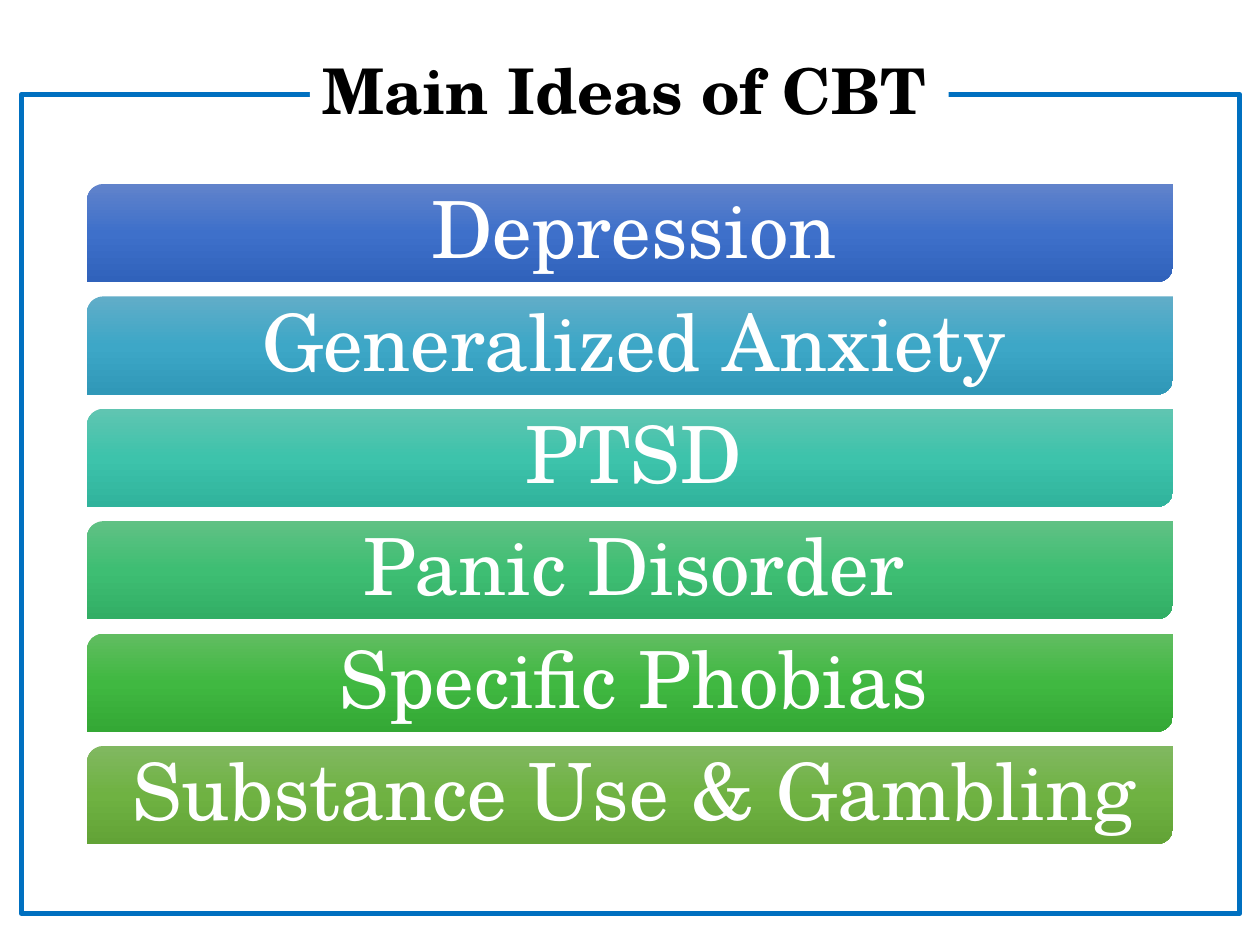
from copy import deepcopy

from pptx import Presentation
from pptx.dml.color import RGBColor
from pptx.enum.shapes import MSO_SHAPE
from pptx.enum.text import MSO_ANCHOR, PP_ALIGN
from pptx.oxml.ns import qn
from pptx.util import Inches, Pt

FONT = "TeX Gyre Schola"
WHITE = RGBColor(0xFF, 0xFF, 0xFF)
BLACK = RGBColor(0, 0, 0)
BLUE = RGBColor(0x00, 0x70, 0xC0)

# Label, then the bar's top, middle and bottom colours
IDEAS = [
    ("Depression", "6183CB", "3E70CA", "3062BB"),
    ("Generalized Anxiety", "61ADC8", "3DA7C7", "3098B8"),
    ("PTSD", "60C5B1", "3DC3AB", "30B39C"),
    ("Panic Disorder", "60C184", "3EBE73", "32AE65"),
    ("Specific Phobias", "61BD61", "40B841", "34A835"),
    ("Substance Use & Gambling", "81B861", "6FB242", "62A336"),
]


def shade(shape, shades):
    """Fill from top to bottom with three evenly spaced colours."""
    fill = shape.fill
    fill.gradient()
    fill.gradient_angle = 270
    stops = shape._element.spPr.find(".//" + qn("a:gsLst"))
    stops.append(deepcopy(stops[0]))
    for i, (stop, tone) in enumerate(zip(fill.gradient_stops, shades)):
        stop.color.rgb = RGBColor.from_string(tone)
        stop.position = i / 2


def write(shape, text, size, color, align, bold=False):
    frame = shape.text_frame
    frame.word_wrap = True
    frame.vertical_anchor = MSO_ANCHOR.MIDDLE
    para = frame.paragraphs[0]
    para.text = text
    para.alignment = align
    para.line_spacing = 0.9
    font = para.font
    font.name, font.size, font.bold = FONT, Pt(size), bold
    font.color.rgb = color


def add_bars(slide, left, top, width, height):
    bar_height = Inches(0.78)
    step = (height - bar_height) / (len(IDEAS) - 1)
    for i, (label, *shades) in enumerate(IDEAS):
        bar = slide.shapes.add_shape(
            MSO_SHAPE.ROUND_2_DIAG_RECTANGLE,
            left, int(top + i * step), width, bar_height)
        bar.shadow.inherit = False
        bar.line.fill.background()
        shade(bar, shades)
        write(bar, label, 45, WHITE, PP_ALIGN.CENTER)
        frame = bar.text_frame
        frame.margin_left, frame.margin_right = Inches(0.06), 0
        frame.margin_top = frame.margin_bottom = Inches(0.03)


def add_frame(slide, left, top, width, height):
    frame = slide.shapes.add_shape(
        MSO_SHAPE.RECTANGLE, left, top, width, height)
    frame.shadow.inherit = False
    frame.fill.background()
    frame.line.color.rgb = BLUE
    frame.line.width = Pt(3)


def add_title(slide, left, top, width, height):
    """Place the heading on white so that it breaks the frame's top edge."""
    title = slide.shapes.add_textbox(left, top, width, height)
    title.fill.solid()
    title.fill.fore_color.rgb = WHITE
    write(title, "Main Ideas of CBT", 36, BLACK, PP_ALIGN.LEFT, bold=True)


def main():
    deck = Presentation()
    deck.slide_width, deck.slide_height = Inches(10), Inches(7.5)
    slide = deck.slides.add_slide(deck.slide_layouts[6])
    add_bars(slide, Inches(0.69), Inches(1.46), Inches(8.62), Inches(5.24))
    add_frame(slide, Inches(0.17), Inches(0.75), Inches(9.67), Inches(6.5))
    add_title(slide, Inches(2.46), Inches(0.5), Inches(5.07), Inches(0.5))
    deck.save("out.pptx")


if __name__ == "__main__":
    main()
